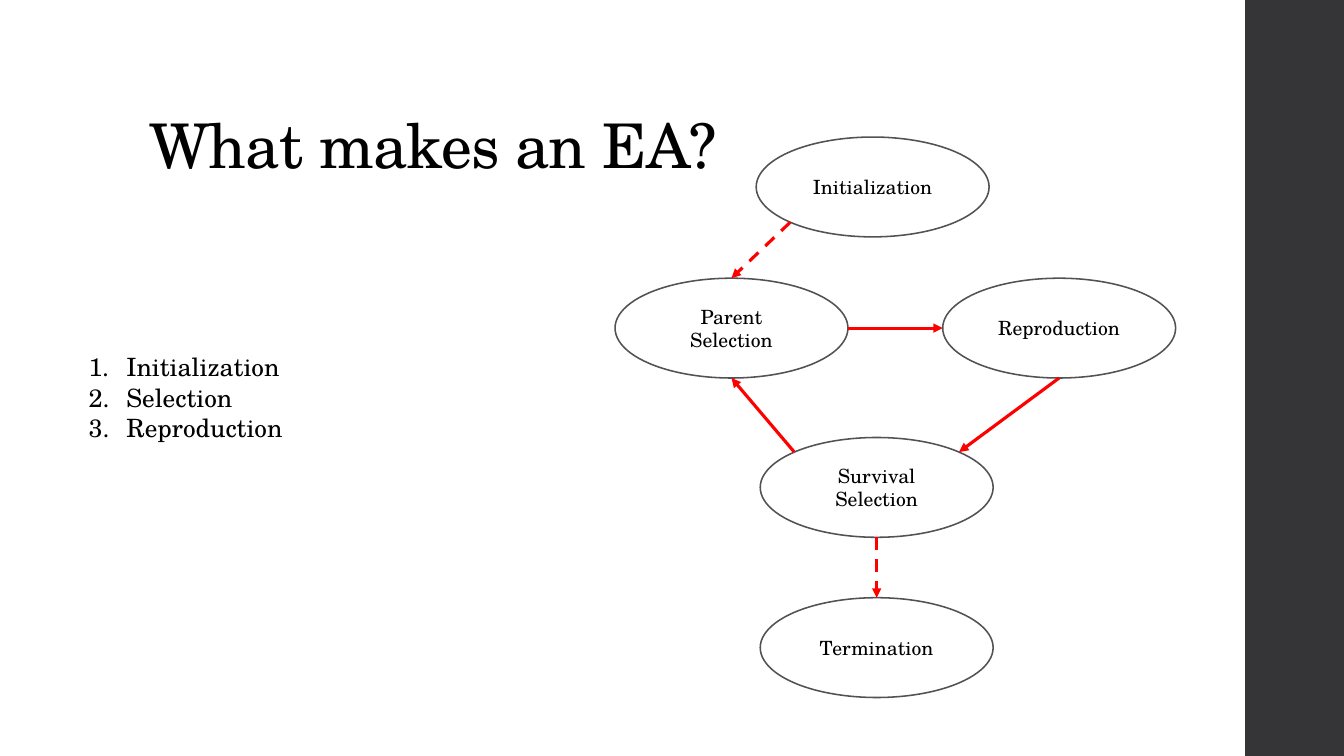
from lxml import etree
from pptx import Presentation
from pptx.dml.color import RGBColor
from pptx.enum.dml import MSO_LINE
from pptx.enum.shapes import MSO_CONNECTOR, MSO_SHAPE
from pptx.enum.text import MSO_ANCHOR, PP_ALIGN
from pptx.oxml.ns import qn
from pptx.util import Inches, Pt

RECTANGLE, OVAL = MSO_SHAPE.RECTANGLE, MSO_SHAPE.OVAL
STRAIGHT, DASH = MSO_CONNECTOR.STRAIGHT, MSO_LINE.DASH
MIDDLE, BOTTOM = MSO_ANCHOR.MIDDLE, MSO_ANCHOR.BOTTOM
CENTER = PP_ALIGN.CENTER
FONT = "TeX Gyre Schola"


def color(hex_text):
    return RGBColor.from_string(hex_text)


def write(shape, text, size):
    frame = shape.text_frame
    frame.word_wrap = True
    frame.text = text
    for para in frame.paragraphs:
        for span in para.runs:
            span.font.name = FONT
            span.font.size = Pt(size)
            span.font.color.rgb = color("000000")
    return frame


deck = Presentation()
deck.slide_width, deck.slide_height = Inches(13.33), Inches(7.5)
page = deck.slides.add_slide(deck.slide_layouts[6])
shapes = page.shapes

# Side band
band_left = Inches(12.35)
band = shapes.add_shape(RECTANGLE, band_left, 0,
                        deck.slide_width - band_left, deck.slide_height)
band.shadow.inherit = False
band.fill.solid()
band.fill.fore_color.rgb = color("353537")
band.line.fill.background()

# Title
title = shapes.add_textbox(Inches(1.38), Inches(0.4), Inches(10.6), Inches(1.45))
frame = write(title, "What makes an EA?", 44)
frame.vertical_anchor = BOTTOM
frame.paragraphs[0].line_spacing = 0.9
frame.paragraphs[0].runs[0].font._element.set("spc", "-50")

# Numbered list
steps = shapes.add_textbox(Inches(0.78), Inches(3.44), Inches(3.03), Inches(1.01))
frame = write(steps, "Initialization\nSelection\nReproduction", 18)
for para in frame.paragraphs:
    properties = para._p.get_or_add_pPr()
    properties.set("marL", str(Inches(0.375)))
    properties.set("indent", str(-Inches(0.375)))
    etree.SubElement(properties, qn("a:buFont"), typeface="+mj-lt")
    etree.SubElement(properties, qn("a:buAutoNum"), type="arabicPeriod")

# Stages of the algorithm: left and top in inches
STAGE_WIDTH, STAGE_HEIGHT = Inches(2.31), Inches(0.99)
stages = {}
for name, left, top in [
    ("Initialization", 7.5, 1.36),
    ("Parent Selection", 6.1, 2.76),
    ("Reproduction", 9.35, 2.76),
    ("Survival Selection", 7.54, 4.34),
    ("Termination", 7.54, 5.93),
]:
    stage = shapes.add_shape(OVAL, Inches(left), Inches(top),
                             STAGE_WIDTH, STAGE_HEIGHT)
    stage.shadow.inherit = False
    stage.fill.background()
    stage.line.color.rgb = color("525256")
    stage.line.width = Pt(1.1)
    frame = write(stage, name, 14)
    frame.vertical_anchor = MIDDLE
    frame.paragraphs[0].alignment = CENTER
    stages[name] = stage

# Connection sites of an ellipse: index, share of width, share of height
NEAR, FAR = 0.1464, 0.8536
SITES = {
    "top": (0, 0.5, 0), "top left": (1, NEAR, NEAR),
    "left": (2, 0, 0.5), "bottom left": (3, NEAR, FAR),
    "bottom": (4, 0.5, 1), "right": (6, 1, 0.5),
    "top right": (7, FAR, NEAR),
}

# Arrows between the stages
for start, start_site, end, end_site, dashed in [
    ("Initialization", "bottom left", "Parent Selection", "top", True),
    ("Parent Selection", "right", "Reproduction", "left", False),
    ("Reproduction", "bottom", "Survival Selection", "top right", False),
    ("Survival Selection", "top left", "Parent Selection", "bottom", False),
    ("Survival Selection", "bottom", "Termination", "top", True),
]:
    points, joints = [], []
    for tag, name, site in [("a:stCxn", start, start_site),
                            ("a:endCxn", end, end_site)]:
        stage = stages[name]
        index, across, down = SITES[site]
        points += [int(stage.left + across * stage.width),
                   int(stage.top + down * stage.height)]
        joints.append((tag, stage.shape_id, index))
    arrow = shapes.add_connector(STRAIGHT, *points)
    for tag, stage_id, index in joints:
        etree.SubElement(arrow._element.nvCxnSpPr.cNvCxnSpPr, qn(tag),
                         id=str(stage_id), idx=str(index))
    arrow.line.color.rgb = color("FF0000")
    arrow.line.width = Pt(2.25)
    if dashed:
        arrow.line.dash_style = DASH
    etree.SubElement(arrow.line._get_or_add_ln(), qn("a:tailEnd"), type="triangle")
    etree.SubElement(arrow._element.spPr, qn("a:effectLst"))

deck.save("out.pptx")
